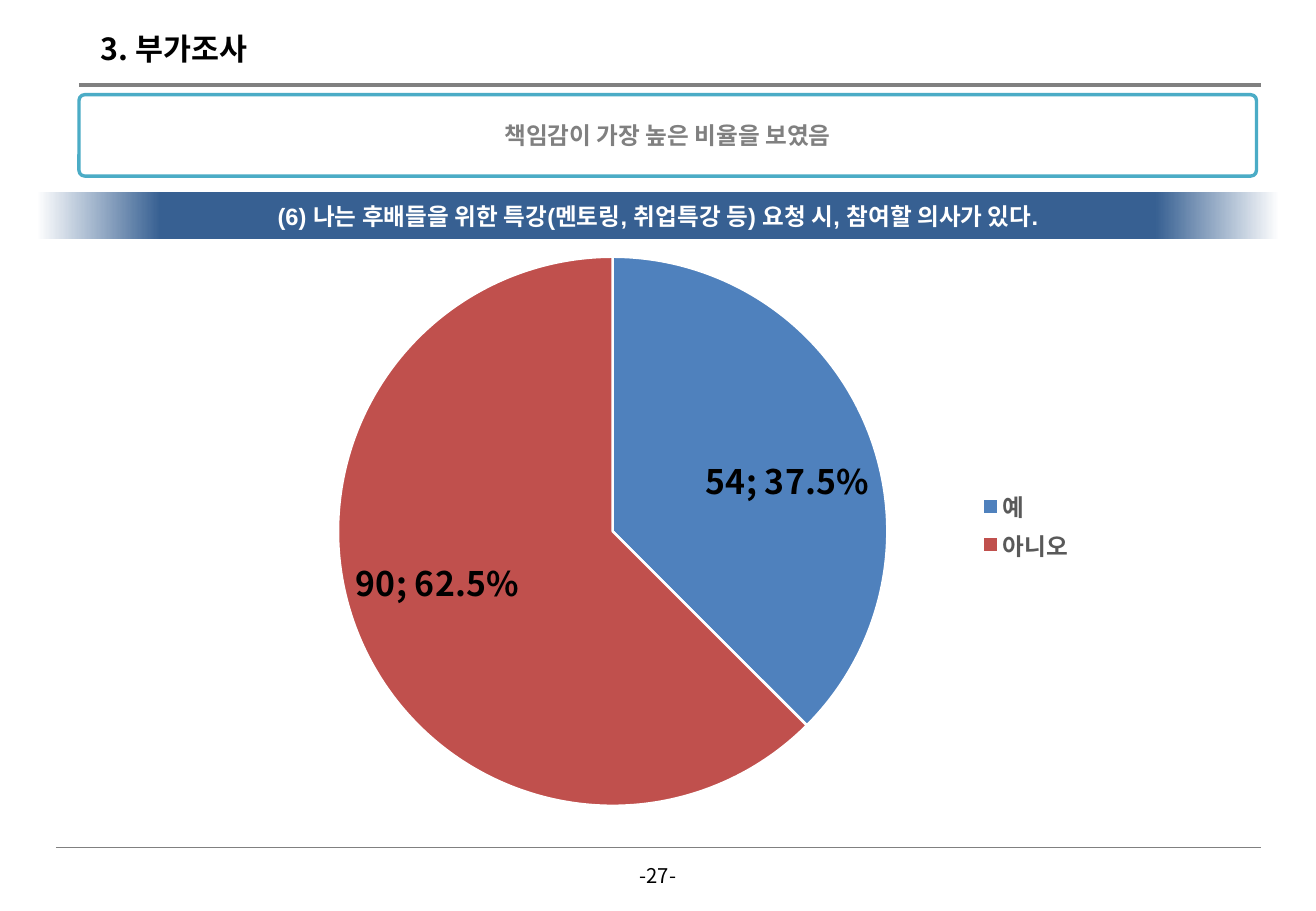
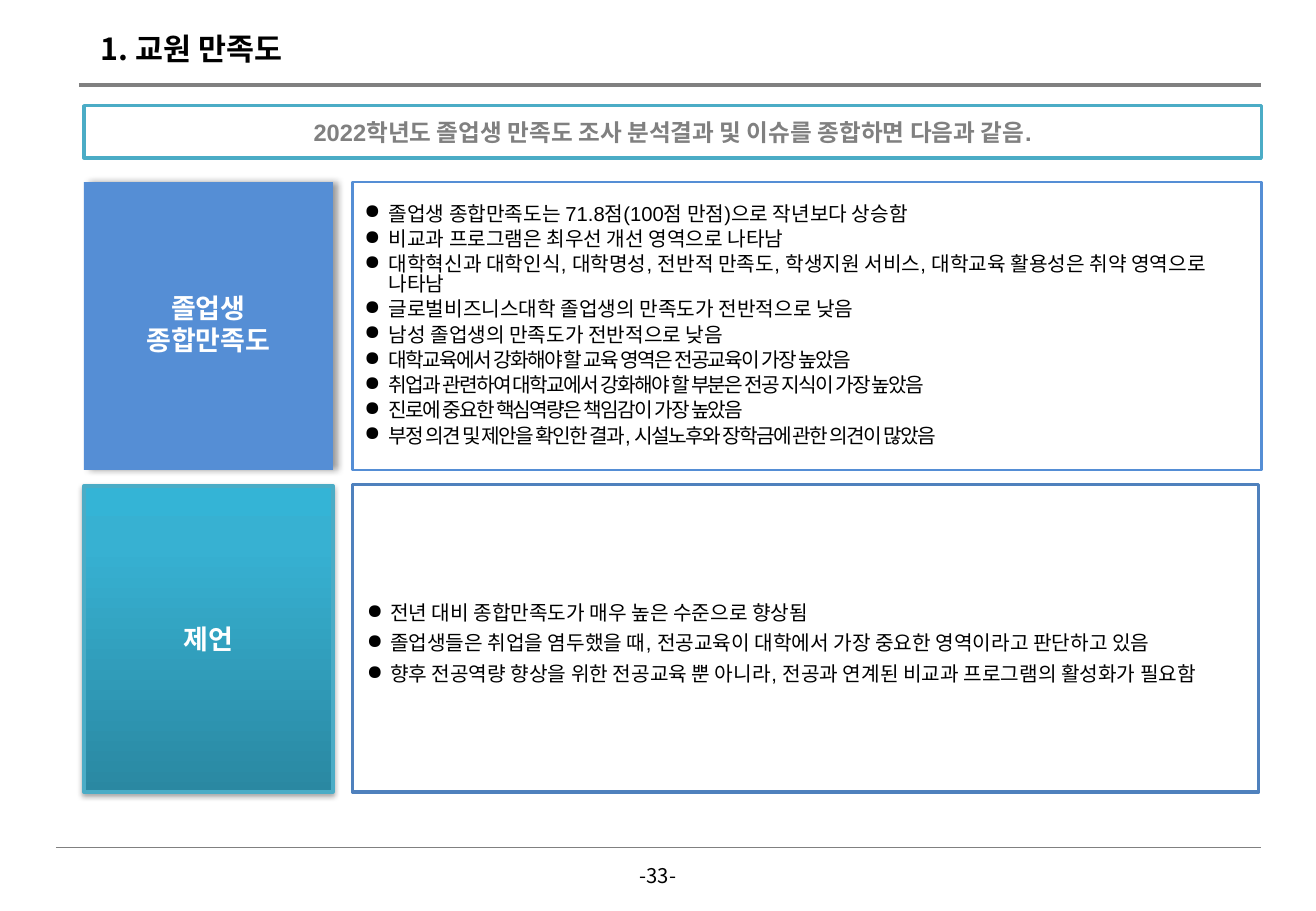
from dataclasses import dataclass

from lxml.etree import SubElement
from pptx import Presentation
from pptx.chart.data import CategoryChartData
from pptx.dml.color import RGBColor
from pptx.enum.chart import XL_CHART_TYPE, XL_LABEL_POSITION, XL_LEGEND_POSITION
from pptx.enum.shapes import MSO_CONNECTOR, MSO_SHAPE
from pptx.enum.text import MSO_ANCHOR, MSO_AUTO_SIZE, PP_ALIGN
from pptx.oxml.ns import qn
from pptx.util import Inches, Pt


@dataclass(frozen=True)
class Theme:
    black: str = "000000"
    white: str = "FFFFFF"
    gray: str = "808080"
    dark: str = "595959"
    teal: str = "4BACC6"
    navy: str = "376092"
    blue: str = "4F81BD"
    red: str = "C0504D"
    sky: str = "558ED5"
    sans: str = "Arial"
    cjk: str = "Noto Sans CJK KR"
    title: int = 18
    lead: int = 14
    head: int = 16
    text: int = 12
    label: int = 20


T = Theme()

# Content
PIE = {
    "title": "3. 부가조사",
    "page": "-27-",
    "lead": "책임감이 가장 높은 비율을 보였음",
    "box": (0.65, 0.78, 9.69, 0.67),
    "round": 7100,
}
ASK = "(6) 나는 후배들을 위한 특강(멘토링, 취업특강 등) 요청 시, 참여할 의사가 있다."
VOTES = [("예", 54, T.blue), ("아니오", 90, T.red)]

SUM = {
    "title": "1. 교원 만족도",
    "page": "-33-",
    "lead": "2022학년도 졸업생 만족도 조사 분석결과 및 이슈를 종합하면 다음과 같음.",
    "box": (0.69, 0.87, 9.69, 0.43),
    "round": None,
}
HEAD = ["졸업생", "종합만족도"]
LOOSE = [
    "졸업생 종합만족도는 71.8점(100점 만점)으로 작년보다 상승함",
    "비교과 프로그램은 최우선 개선 영역으로 나타남",
    "대학혁신과 대학인식, 대학명성, 전반적 만족도, 학생지원 서비스, 대학교육 활용성은 취약 영역으로 나타남",
    "글로벌비즈니스대학 졸업생의 만족도가 전반적으로 낮음",
    "남성 졸업생의 만족도가 전반적으로 낮음",
]
TIGHT = [
    "대학교육에서 강화해야 할 교육 영역은 전공교육이 가장 높았음",
    "취업과 관련하여 대학교에서 강화해야 할 부분은 전공 지식이 가장 높았음",
    "진로에 중요한 핵심역량은 책임감이 가장 높았음",
    "부정 의견 및 제안을 확인한 결과, 시설노후와 장학금에 관한 의견이 많았음",
]
ADVICE = [
    "전년 대비 종합만족도가 매우 높은 수준으로 향상됨",
    "졸업생들은 취업을 염두했을 때, 전공교육이 대학에서 가장 중요한 영역이라고 판단하고 있음",
    "향후 전공역량 향상을 위한 전공교육 뿐 아니라, 전공과 연계된 비교과 프로그램의 활성화가 필요함",
]


# Helpers
def put(obj, **vals):
    for key, val in vals.items():
        setattr(obj, key, val)


def node(up, tag, **vals):
    return SubElement(up, qn(tag), {k: str(v) for k, v in vals.items()})


def place(shape, box):
    put(shape, **dict(zip(("left", "top", "width", "height"), map(Inches, box))))


def style(font, size, color, bold=False, name=T.cjk):
    put(font, size=Pt(size), bold=bold, name=name)
    font.color.rgb = RGBColor.from_string(color)


def write(shape, lines, size, color, bold=False, name=T.cjk, align=PP_ALIGN.CENTER,
          pad=(0.1, 0.05, 0.1, 0.05), wrap=True, hang=None, tight=(), **gaps):
    frame = shape.text_frame
    put(frame, auto_size=MSO_AUTO_SIZE.NONE, word_wrap=wrap,
        vertical_anchor=MSO_ANCHOR.MIDDLE)
    sides = ("left", "top", "right", "bottom")
    put(frame, **{f"margin_{s}": Inches(v) for s, v in zip(sides, pad)})
    for i, line in enumerate(lines):
        para = frame.paragraphs[0] if i == 0 else frame.add_paragraph()
        props = para._p.get_or_add_pPr()
        props.set("marL", str(Inches(hang or 0)))
        props.set("indent", str(-Inches(hang or 0)))
        if hang:
            node(props, "a:buChar", char="●")
        else:
            node(props, "a:buNone")
        first = {"space_before": Pt(0)} if i == 0 else {}
        put(para, alignment=align, **{"space_before": Pt(0), **gaps, **first})
        run = para.add_run()
        run.text = line
        style(run.font, size, color, bold, name)
        mark = run._r.get_or_add_rPr()
        node(mark, "a:ea", typeface=T.cjk)
        if line in tight:
            mark.set("spc", "-100")


def paint(shape, fill=None, line=None, width=2):
    if fill:
        shape.fill.solid()
        shape.fill.fore_color.rgb = RGBColor.from_string(fill)
    else:
        shape.fill.background()
    if line:
        shape.line.color.rgb = RGBColor.from_string(line)
        shape.line.width = Pt(width)
    else:
        shape.line.fill.background()


def panel(slide, box, **look):
    shape = slide.shapes.add_shape(MSO_SHAPE.RECTANGLE, *map(Inches, box))
    shape.shadow.inherit = False
    paint(shape, **look)
    return shape


def blend(shape, stops, angle):
    old = shape.element.spPr.find(qn("a:noFill"))
    grad = node(shape.element.spPr, "a:gradFill", rotWithShape=1)
    row = node(grad, "a:gsLst")
    for pos, color in stops:
        node(node(row, "a:gs", pos=pos * 1000), "a:srgbClr", val=color)
    node(grad, "a:lin", ang=angle * 60000, scaled=0)
    shape.element.spPr.replace(old, grad)


def shade(shape, alpha, blur, dist, angle):
    fx = shape.element.spPr.find(qn("a:effectLst"))
    drop = node(fx, "a:outerShdw", blurRad=Pt(blur), dist=Pt(dist),
                dir=angle * 60000, algn="ctr", rotWithShape=0)
    node(node(drop, "a:srgbClr", val=T.black), "a:alpha", val=alpha * 1000)


# Shared frame
def rule(slide, layout, x, y, width):
    line = slide.shapes.add_connector(
        MSO_CONNECTOR.STRAIGHT, Inches(x), Inches(y), Inches(10.38), Inches(y))
    line.line.color.rgb = RGBColor.from_string(T.gray)
    line.line.width = Pt(width)
    node(line.element.spPr, "a:effectLst")
    layout.element.cSld.spTree.append(line.element)


def start(deck, data):
    slide = deck.slides.add_slide(deck.slide_layouts[1])
    title, lead = slide.placeholders
    place(title, (0.73, 0.2, 1.85, 0.4))
    write(title, [data["title"]], T.title, T.black, True, align=PP_ALIGN.LEFT, wrap=False)
    place(lead, data["box"])
    geom = node(lead.element.spPr, "a:prstGeom",
                prst="roundRect" if data["round"] else "rect")
    guide = node(geom, "a:avLst")
    if data["round"]:
        node(guide, "a:gd", name="adj", fmla=f"val {data['round']}")
    paint(lead, T.white, T.teal)
    write(lead, [data["lead"]], T.lead, T.gray, True, T.sans, pad=(0.2, 0.04, 0.2, 0.04))
    page = slide.shapes.add_textbox(*map(Inches, (5.14, 7.06, 0.55, 0.3)))
    write(page, [data["page"]], T.text, T.black, wrap=False)
    return slide


def layout_at(up, before, **vals):
    old = up.find(qn("c:layout"))
    if old is not None:
        up.remove(old)
    box = node(up, "c:layout")
    man = node(box, "c:manualLayout")
    for key, val in vals.items():
        node(man, f"c:{key}", val=val)
    up.insert(before, box)


# Survey chart
def survey(slide):
    band = panel(slide, (0.3, 1.58, 10.23, 0.39))
    blend(band, [(0, T.white), (10, T.navy), (90, T.navy), (100, T.white)], 0)
    write(band, [ASK], T.lead, T.white, True, T.sans)

    data = CategoryChartData()
    data.categories = [name for name, _, _ in VOTES]
    data.add_series("Series 1", [count for _, count, _ in VOTES])
    chart = slide.shapes.add_chart(
        XL_CHART_TYPE.PIE, *map(Inches, (0.42, 1.97, 10.16, 4.81)), data).chart
    put(chart, has_title=False, has_legend=True)
    style(chart.font, 10, T.black)
    put(chart.legend, position=XL_LEGEND_POSITION.RIGHT, include_in_layout=False)
    style(chart.legend.font, T.lead, T.dark, True)
    plot = chart.plots[0]
    put(plot, vary_by_categories=True, has_data_labels=True)
    for i, (_, _, color) in enumerate(VOTES):
        slice_ = plot.series[0].points[i].format
        slice_.fill.solid()
        slice_.fill.fore_color.rgb = RGBColor.from_string(color)
        slice_.line.color.rgb = RGBColor.from_string(T.white)
        slice_.line.width = Pt(1.5)
    tags = plot.data_labels
    put(tags, show_value=True, show_percentage=True, number_format="0.0%",
        number_format_is_linked=False, position=XL_LABEL_POSITION.BEST_FIT)
    style(tags.font, T.label, T.black, True)
    mark = node(tags._element, "c:separator")
    mark.text = "; "
    tags._element.find(qn("c:showBubbleSize")).addnext(mark)
    area = chart._chartSpace.chart.plotArea
    layout_at(area, 0, layoutTarget="inner", xMode="edge", yMode="edge",
              x=0.23, y=0.03, w=0.45, h=0.94)
    layout_at(chart.legend._element, 1, xMode="edge", yMode="edge",
              x=0.74, y=0.42, w=0.1, h=0.14)


# Summary panels
def summary(slide):
    left, wide = 0.69, 2.05
    body = dict(size=T.text, color=T.black, name=T.sans, align=PP_ALIGN.LEFT,
                line_spacing=0.83)
    head = panel(slide, (left, 1.5, wide, 2.37), fill=T.sky)
    shade(head, 40, 4, 3, 0)
    write(head, HEAD, T.head, T.white, True, T.sans, space_before=Pt(3), line_spacing=0.85)
    facts = panel(slide, (2.9, 1.5, 7.48, 2.37), line=T.sky, width=1.5)
    write(facts, LOOSE + TIGHT, hang=0.2, tight=TIGHT, space_before=Pt(3), **body)
    tips = panel(slide, (2.9, 3.99, 7.46, 2.53), fill=T.white, line=T.blue)
    write(tips, ADVICE, hang=0.19, pad=(0.12, 0.35, 0.12, 0.24), space_after=Pt(6), **body)
    side = panel(slide, (left, 4, wide, 2.52), line=T.teal)
    blend(side, [(0, "2A88A2"), (80, "37B1D2"), (100, "34B4D6")], 270)
    shade(side, 35, 3.1, 1.8, 90)
    write(side, ["제언"], T.head, T.white, True, pad=(0.04,) * 4)


def main():
    deck = Presentation()
    put(deck, slide_width=Inches(10.83), slide_height=Inches(7.5))
    first = start(deck, PIE)
    for x, y, width in [(0.65, 0.7, 2), (0.46, 6.98, 0.5)]:
        rule(first, deck.slide_layouts[1], x, y, width)
    survey(first)
    summary(start(deck, SUM))
    deck.save("out.pptx")


if __name__ == "__main__":
    main()
